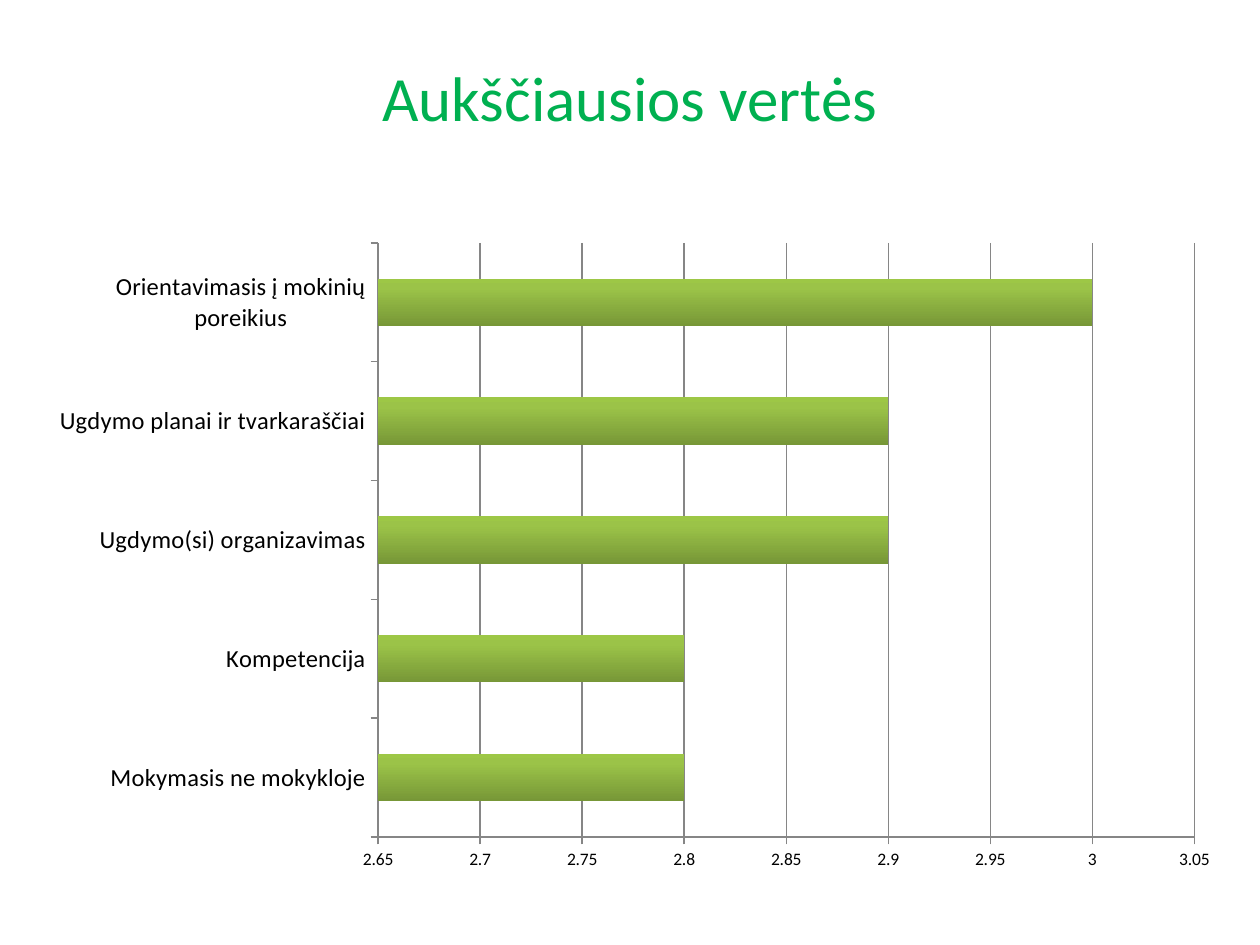
from lxml import etree
from pptx import Presentation, oxml
from pptx.chart.data import CategoryChartData
from pptx.dml.color import RGBColor
from pptx.enum import chart as charts, text
from pptx.oxml.ns import qn
from pptx.util import Pt

VALUES = {
    "Mokymasis ne mokykloje": 2.8,
    "Kompetencija": 2.8,
    "Ugdymo(si) organizavimas": 2.9,
    "Ugdymo planai ir tvarkaraščiai": 2.9,
    "Orientavimasis į mokinių poreikius": 3,
}
BAR_STOPS = ((0, "779737"), (80, "9BC348"), (100, "9DC746"))
PLOT_AREA = {"x": 0.29, "y": 0.12, "w": 0.69, "h": 0.81}


def color(value):
    return RGBColor.from_string(value)


def format_text(frame, content, size, ink, font="Calibri",
                align=text.PP_ALIGN.CENTER, anchor=text.MSO_ANCHOR.MIDDLE):
    frame.word_wrap = True
    frame.vertical_anchor = anchor
    paragraph = frame.paragraphs[0]
    paragraph.alignment = align
    run = paragraph.add_run()
    run.text = content
    run.font.name = font
    run.font.size = Pt(size)
    run.font.color.rgb = color(ink)


def set_gradient(series, stops):
    """Fill the bars from bottom to top with any number of stops."""
    series.format.fill.gradient()
    old = series._element.find(".//" + qn("a:gradFill"))
    stop_xml = "".join(
        f'<a:gs pos="{position * 1000}"><a:srgbClr val="{value}"/></a:gs>'
        for position, value in stops)
    new = oxml.parse_xml(
        '<a:gradFill xmlns:a="http://schemas.openxmlformats.org/drawingml/2006/main"'
        f' rotWithShape="1"><a:gsLst>{stop_xml}</a:gsLst>'
        '<a:lin ang="16200000" scaled="0"/></a:gradFill>')
    old.getparent().replace(old, new)


def set_plot_layout(chart, area):
    """Place the inner plot area by fractions of the chart."""
    plot_area = chart._chartSpace.find(".//" + qn("c:plotArea"))
    for old in plot_area.findall(qn("c:layout")):
        plot_area.remove(old)
    layout = etree.Element(qn("c:layout"))
    manual = etree.SubElement(layout, qn("c:manualLayout"))
    settings = {"layoutTarget": "inner", "xMode": "edge", "yMode": "edge", **area}
    for name, value in settings.items():
        etree.SubElement(manual, qn("c:" + name)).set("val", str(value))
    plot_area.insert(0, layout)


class SlideBuilder:
    font = "Calibri"
    title_color = "00B050"
    text_color = "000000"
    line_color = "868686"

    def __init__(self, slide):
        self.slide = slide

    def title(self, content, left, top, width, height):
        box = self.slide.shapes.add_textbox(Pt(left), Pt(top), Pt(width), Pt(height))
        format_text(box.text_frame, content, 36, self.title_color, self.font)

    def style_line(self, line):
        line.color.rgb = color(self.line_color)
        line.width = Pt(0.75)

    def bar_chart(self, values, left, top, width, height):
        data = CategoryChartData(number_format="General")
        data.categories = list(values)
        data.add_series("Series 1", list(values.values()))
        chart = self.slide.shapes.add_chart(
            charts.XL_CHART_TYPE.BAR_CLUSTERED,
            Pt(left), Pt(top), Pt(width), Pt(height), data).chart
        chart.has_title = False
        chart.has_legend = False
        chart.font.name = self.font
        chart.font.size = Pt(10)
        chart.font.color.rgb = color(self.text_color)

        plot = chart.plots[0]
        plot.gap_width = 150
        plot.vary_by_categories = False
        set_gradient(plot.series[0], BAR_STOPS)

        for axis in (chart.category_axis, chart.value_axis):
            axis.major_tick_mark = charts.XL_TICK_MARK.OUTSIDE
            self.style_line(axis.format.line)
        chart.category_axis.tick_labels.font.size = Pt(14)

        value_axis = chart.value_axis
        value_axis.minimum_scale = 2.65
        value_axis.maximum_scale = 3.05
        value_axis.major_unit = 0.05
        value_axis.has_major_gridlines = True
        self.style_line(value_axis.major_gridlines.format.line)
        set_plot_layout(chart, PLOT_AREA)


def main():
    presentation = Presentation()
    presentation.slide_width = Pt(720)
    presentation.slide_height = Pt(540)
    slide = presentation.slides.add_slide(presentation.slide_layouts[6])
    builder = SlideBuilder(slide)
    builder.title("Aukščiausios vertės", 36, 21.6, 648, 67)
    builder.bar_chart(VALUES, 20, 88.6, 676, 419)
    presentation.save("out.pptx")


if __name__ == "__main__":
    main()
